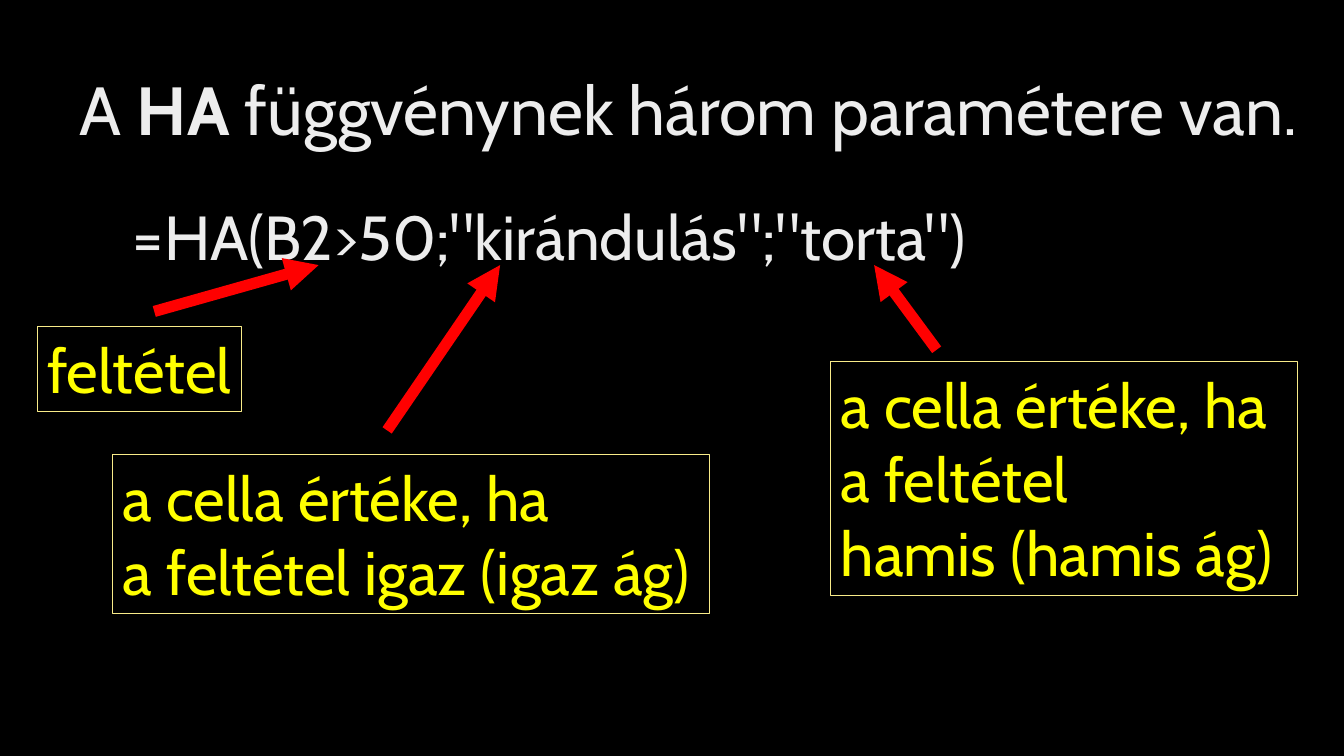
from lxml import etree
from pptx import Presentation
from pptx.dml.color import RGBColor
from pptx.enum.shapes import MSO_CONNECTOR, MSO_SHAPE
from pptx.enum.text import MSO_ANCHOR, PP_ALIGN
from pptx.oxml.ns import qn
from pptx.util import Inches, Pt

STRAIGHT = MSO_CONNECTOR.STRAIGHT
RECT = MSO_SHAPE.RECTANGLE
TOP, MIDDLE = MSO_ANCHOR.TOP, MSO_ANCHOR.MIDDLE
LEFT = PP_ALIGN.LEFT

BLACK = RGBColor(0x00, 0x00, 0x00)
LIGHT = RGBColor(0xED, 0xED, 0xED)
YELLOW = RGBColor(0xFF, 0xFF, 0x00)
PALE_YELLOW = RGBColor(0xF8, 0xEB, 0x89)
RED = RGBColor(0xFF, 0x00, 0x00)
FONT = "Cabin"

# Content: lines of (text, bold) runs; boxes are left, top, width, height
HEADINGS = [
    ((0.69, 0.4, 12.41, 1.45), MIDDLE, 48.6,
     [[("A\u00a0", False), ("HA", True),
       ("\u00a0függvénynek három paramétere van.", False)]]),
    ((1.22, 2, 9.03, 0.85), TOP, 44.4,
     [[('=HA(B2>50;"kirándulás";"torta")', False)]]),
]
# Box, wrap, lines, arrow start, arrow end
LABELS = [
    ((0.37, 3.24, 2.03, 0.84), False, ["feltétel"],
     (1.53, 3.09), (3.16, 2.63)),
    ((1.12, 4.51, 5.92, 1.58), False,
     ["a cella értéke, ha ", "a feltétel igaz (igaz ág)"],
     (3.84, 4.27), (4.96, 2.63)),
    ((8.24, 3.59, 4.63, 2.32), True,
     ["a cella értéke, ha a feltétel ", "hamis (hamis ág)"],
     (9.29, 3.47), (8.67, 2.63)),
]


def inches(values):
    return [Inches(v) for v in values]


def write(sp, lines, size, color, anchor=TOP, wrap=True, spacing=None):
    tf = sp.text_frame
    tf.word_wrap = wrap
    tf.vertical_anchor = anchor
    p = tf.paragraphs[0]
    p.alignment = LEFT
    p.line_spacing = spacing
    for i, runs in enumerate(lines):
        if i:
            p.add_line_break()
        for text, bold in runs:
            r = p.add_run()
            r.text = text
            for name, value in {"name": FONT, "size": Pt(size), "bold": bold}.items():
                setattr(r.font, name, value)
            r.font.color.rgb = color


def add_label(slide, box, wrap, lines):
    sp = slide.shapes.add_shape(RECT, *inches(box))
    sp.shadow.inherit = False
    sp.fill.background()
    sp.line.color.rgb = PALE_YELLOW
    sp.line.width = Pt(0.75)
    write(sp, [[(text, False)] for text in lines], 44, YELLOW, wrap=wrap)


def add_arrow(slide, start, end):
    cxn = slide.shapes.add_connector(STRAIGHT, *inches(start + end))
    cxn.line.color.rgb = RED
    cxn.line.width = Pt(8)
    ln = cxn.line._get_or_add_ln()
    etree.SubElement(ln, qn("a:tailEnd"), type="triangle")
    etree.SubElement(cxn._element.spPr, qn("a:effectLst"))


def main():
    prs = Presentation()
    prs.slide_width, prs.slide_height = inches((13.33, 7.5))
    slide = prs.slides.add_slide(prs.slide_layouts[6])
    slide.background.fill.solid()
    slide.background.fill.fore_color.rgb = BLACK

    # Title and formula
    for box, anchor, size, lines in HEADINGS:
        sp = slide.shapes.add_textbox(*inches(box))
        write(sp, lines, size, LIGHT, anchor, spacing=0.9)

    # Parameter labels with their arrows
    for box, wrap, lines, start, end in LABELS:
        add_label(slide, box, wrap, lines)
        add_arrow(slide, start, end)

    prs.save("out.pptx")


if __name__ == "__main__":
    main()
